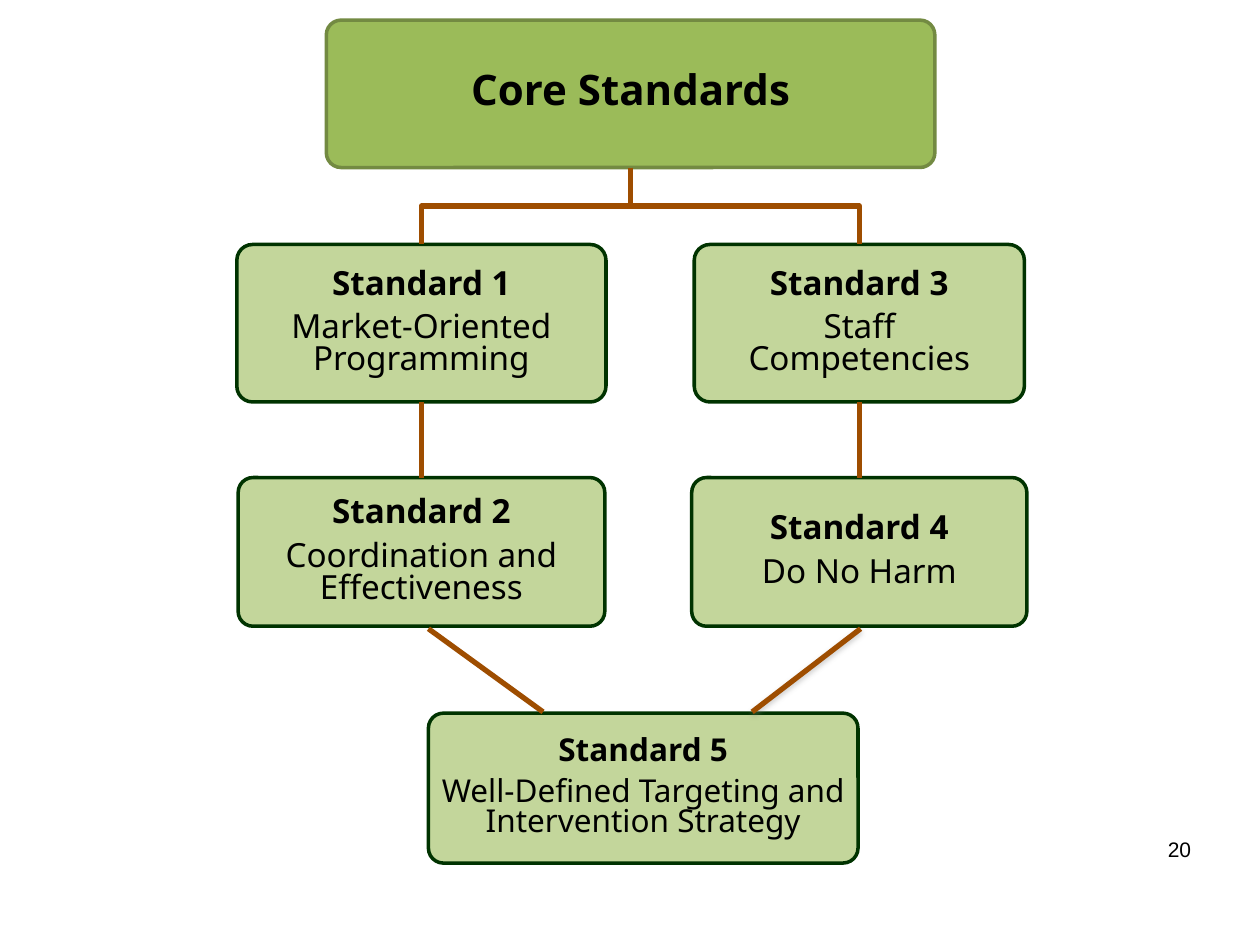
from lxml import etree
from pptx import Presentation
from pptx.dml.color import RGBColor
from pptx.enum.shapes import MSO_CONNECTOR, MSO_SHAPE
from pptx.enum.text import MSO_ANCHOR, MSO_AUTO_SIZE, PP_ALIGN
from pptx.oxml.ns import qn
from pptx.util import Emu, Pt

ROUNDED = MSO_SHAPE.ROUNDED_RECTANGLE
STRAIGHT = MSO_CONNECTOR.STRAIGHT
CENTER, MIDDLE = PP_ALIGN.CENTER, MSO_ANCHOR.MIDDLE
GROW = MSO_AUTO_SIZE.SHAPE_TO_FIT_TEXT
TOP, BOTTOM = 0, 2

BLACK = RGBColor(0x00, 0x00, 0x00)
GREEN = RGBColor(0x9B, 0xBB, 0x59)
OLIVE = RGBColor(0x73, 0x8A, 0x42)
PALE_GREEN = RGBColor(0xC3, 0xD6, 0x9B)
DARK_GREEN = RGBColor(0x00, 0x33, 0x00)
BROWN = RGBColor(0x9E, 0x4D, 0x00)

SCALE = 9144  # EMU per px, 100 px to the inch

# left, top, width, height, text size, inset, heading, title
STANDARDS = [
    (188, 194, 293, 125, 19, 8, "Standard 1", "Market-Oriented Programming"),
    (189, 379, 291, 118, 19, 8, "Standard 2", "Coordination and Effectiveness"),
    (551, 194, 262, 125, 19, 8, "Standard 3", "Staff Competencies"),
    (549, 379, 266, 118, 19, 8, "Standard 4", "Do No Harm"),
    (340, 566, 341, 119, 18, 7, "Standard 5",
     "Well-Defined Targeting and Intervention Strategy"),
]


def px(n):
    return Emu(int(n * SCALE))


def add_run(p, text, **font):
    r = p.add_run()
    r.text = text
    r.font.color.rgb = BLACK
    for name, value in font.items():
        setattr(r.font, name, value)


def add_box(slide, box, lines, size, inset, fill, border):
    """Rounded box with a bold first line and plain lines below it."""
    s = slide.shapes.add_shape(ROUNDED, *map(px, box))
    s.adjustments[0] = 0.1
    s.shadow.inherit = False
    s.fill.solid()
    s.fill.fore_color.rgb = fill
    s.line.color.rgb = border
    s.line.width = Pt(2)
    tf = s.text_frame
    frame = {"word_wrap": True, "vertical_anchor": MIDDLE}
    for side in ("left", "top", "right", "bottom"):
        frame[f"margin_{side}"] = px(inset)
    for name, value in frame.items():
        setattr(tf, name, value)
    for i, text in enumerate(lines):
        p = tf.add_paragraph() if i else tf.paragraphs[0]
        para = {"alignment": CENTER, "line_spacing": 0.8,
                "space_after": Pt(round(size * 0.35, 2))}
        for name, value in para.items():
            setattr(p, name, value)
        add_run(p, text, size=Pt(size), name="Noto Sans", bold=i == 0)
    return s


def style_line(s):
    s.line.color.rgb = BROWN
    s.line.width = Pt(3)


def add_elbow(slide, upper, lower):
    """Stepped line from the bottom of one box to the top of another."""
    x1, y1 = upper.left + upper.width // 2, upper.top + upper.height
    x2, y2 = lower.left + lower.width // 2, lower.top
    bend = (y1 + y2) // 2
    path = slide.shapes.build_freeform(x1, y1)
    path.add_line_segments([(x1, bend), (x2, bend), (x2, y2)], close=False)
    s = path.convert_to_shape()
    s.fill.background()
    s.shadow.inherit = False
    style_line(s)


def add_line(slide, start=(0, 0), end=(0, 0), shadow=False):
    s = slide.shapes.add_connector(STRAIGHT, *map(px, start + end))
    style_line(s)
    effects = etree.SubElement(s._element.spPr, qn("a:effectLst"))
    if shadow:
        outer = etree.SubElement(effects, qn("a:outerShdw"), blurRad="40000",
                                 dist="20000", dir="5400000", rotWithShape="0")
        color = etree.SubElement(outer, qn("a:srgbClr"), val="808080")
        etree.SubElement(color, qn("a:alpha"), val="38000")
    return s


def add_chart_of_standards(slide):
    # Heading and the five standards
    core = add_box(slide, (259, 16, 483, 117), ["Core Standards"],
                   24, 10, GREEN, OLIVE)
    boxes = [add_box(slide, (x, y, w, h), lines, size, inset,
                     PALE_GREEN, DARK_GREEN)
             for x, y, w, h, size, inset, *lines in STANDARDS]

    # Two columns below the heading
    for upper, lower in (boxes[0:2], boxes[2:4]):
        add_elbow(slide, core, upper)
        s = add_line(slide)
        s.begin_connect(upper, BOTTOM)
        s.end_connect(lower, TOP)

    # Both columns lead to the last standard
    add_line(slide, (431, 565), (340, 499))
    add_line(slide, (683, 499), (597, 565), shadow=True)


def add_page_number(slide, box, number):
    tf = slide.shapes.add_textbox(*map(px, box)).text_frame
    tf.word_wrap = True
    tf.auto_size = GROW
    add_run(tf.paragraphs[0], number, size=Pt(12), name="Arial")


def main():
    prs = Presentation()
    prs.slide_width, prs.slide_height = px(1000), px(750)
    slide = prs.slides.add_slide(prs.slide_layouts[6])
    add_chart_of_standards(slide)
    add_page_number(slide, (917, 659, 48, 30), "20")
    prs.save("out.pptx")


if __name__ == "__main__":
    main()
